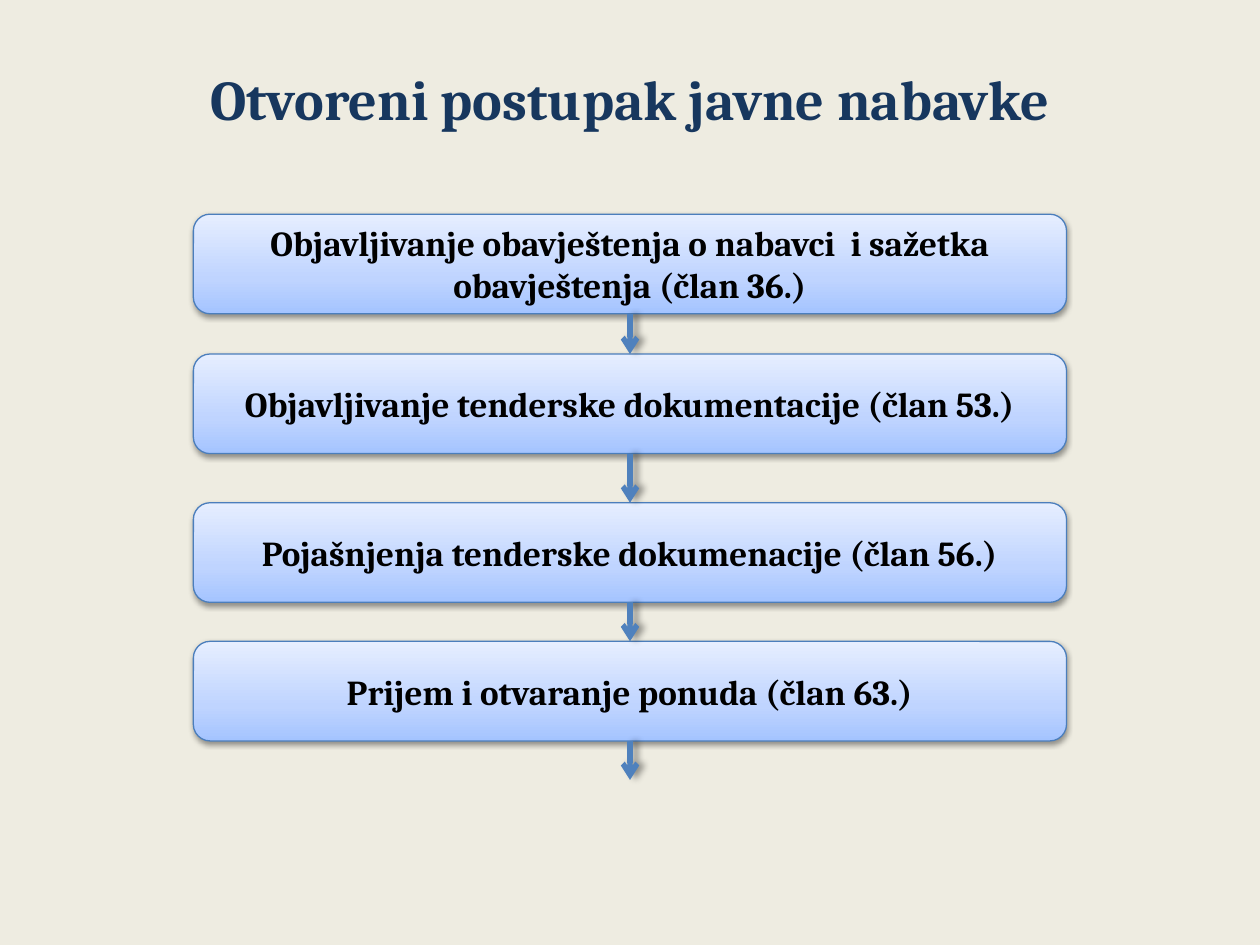
from lxml import etree
from pptx import Presentation
from pptx.dml.color import RGBColor
from pptx.enum.shapes import MSO_CONNECTOR, MSO_SHAPE
from pptx.enum.text import MSO_ANCHOR, PP_ALIGN
from pptx.oxml.ns import qn
from pptx.util import Inches, Pt

ROUNDED = MSO_SHAPE.ROUNDED_RECTANGLE
STRAIGHT = MSO_CONNECTOR.STRAIGHT
MIDDLE = MSO_ANCHOR.MIDDLE
CENTER = PP_ALIGN.CENTER


def rgb(value):
    return RGBColor.from_string(value)


def add_color(parent, value, alpha=None):
    color = etree.SubElement(parent, qn("a:srgbClr"), val=value)
    if alpha is not None:
        etree.SubElement(color, qn("a:alpha"), val=str(alpha * 1000))


def add_shadow(effects, alpha, blur, distance, angle):
    shadow = etree.SubElement(
        effects, qn("a:outerShdw"), blurRad=str(Pt(blur)),
        dist=str(Pt(distance)), dir=str(angle * 60000), rotWithShape="0")
    add_color(shadow, "000000", alpha)


class ProcedureSlide:
    FONT = "Cambria"
    BACKGROUND = "EEECE1"
    TITLE_COLOR = "17375E"
    STEP_COLOR = "000000"
    STEP_BORDER = "4B7EBC"
    STEP_GRADIENT = ((0, "A4C4FF"), (35, "BFD4FF"), (100, "E6EEFF"))
    ARROW_COLOR = "4F81BD"

    def __init__(self, presentation):
        self.slide = presentation.slides.add_slide(presentation.slide_layouts[6])
        background = self.slide.background.fill
        background.solid()
        background.fore_color.rgb = rgb(self.BACKGROUND)

    def set_text(self, shape, text, size, color):
        frame = shape.text_frame
        frame.word_wrap = True
        frame.vertical_anchor = MIDDLE
        paragraph = frame.paragraphs[0]
        paragraph.text = text
        paragraph.alignment = CENTER
        font = paragraph.font
        font.name, font.size, font.bold = self.FONT, Pt(size), True
        font.color.rgb = rgb(color)

    def title(self, text, left, top, width, height):
        box = self.slide.shapes.add_textbox(
            Inches(left), Inches(top), Inches(width), Inches(height))
        self.set_text(box, text, 32, self.TITLE_COLOR)

    def step(self, text, left, top, width, height):
        box = self.slide.shapes.add_shape(
            ROUNDED, Inches(left), Inches(top), Inches(width), Inches(height))
        box.fill.gradient()
        box.fill.gradient_angle = 90
        properties = box.element.spPr
        stops = properties.find(".//" + qn("a:gsLst"))
        for stop in list(stops):
            stops.remove(stop)
        for position, color in self.STEP_GRADIENT:
            stop = etree.SubElement(stops, qn("a:gs"), pos=str(position * 1000))
            add_color(stop, color)
        box.line.color.rgb = rgb(self.STEP_BORDER)
        box.line.width = Pt(0.75)
        box.shadow.inherit = False
        add_shadow(properties.find(qn("a:effectLst")), 38, 3.1, 1.6, 90)
        self.set_text(box, text, 20, self.STEP_COLOR)

    def arrow(self, x, top, bottom):
        line = self.slide.shapes.add_connector(
            STRAIGHT, Inches(x), Inches(top), Inches(x), Inches(bottom))
        line.line.color.rgb = rgb(self.ARROW_COLOR)
        line.line.width = Pt(3)
        properties = line.element.spPr
        etree.SubElement(properties.find(qn("a:ln")), qn("a:tailEnd"), type="arrow")
        effects = etree.SubElement(properties, qn("a:effectLst"))
        add_shadow(effects, 40, 4, 3, 0)


def main():
    presentation = Presentation()
    presentation.slide_width = Inches(10)
    presentation.slide_height = Inches(7.5)
    procedure = ProcedureSlide(presentation)

    # Title
    procedure.title("Otvoreni postupak javne nabavke", 0.5, 0.3, 9, 0.96)

    # Procedure steps, each with its top edge
    steps = (
        (1.7, "Objavljivanje obavještenja o nabavci  i sažetka obavještenja (član 36.)"),
        (2.81, "Objavljivanje tenderske dokumentacije (član 53.)"),
        (3.99, "Pojašnjenja tenderske dokumenacije (član 56.)"),
        (5.09, "Prijem i otvaranje ponuda (član 63.)"),
    )
    step_width, step_height = 6.93, 0.79
    center = 5
    for top, text in steps:
        procedure.step(text, center - step_width / 2, top, step_width, step_height)

    # Arrows from each step to the next, the last one leading onward
    arrow_ends = [top for top, _ in steps[1:]] + [6.19]
    for (top, _), end in zip(steps, arrow_ends):
        procedure.arrow(center, top + step_height, end)

    presentation.save("out.pptx")


if __name__ == "__main__":
    main()
